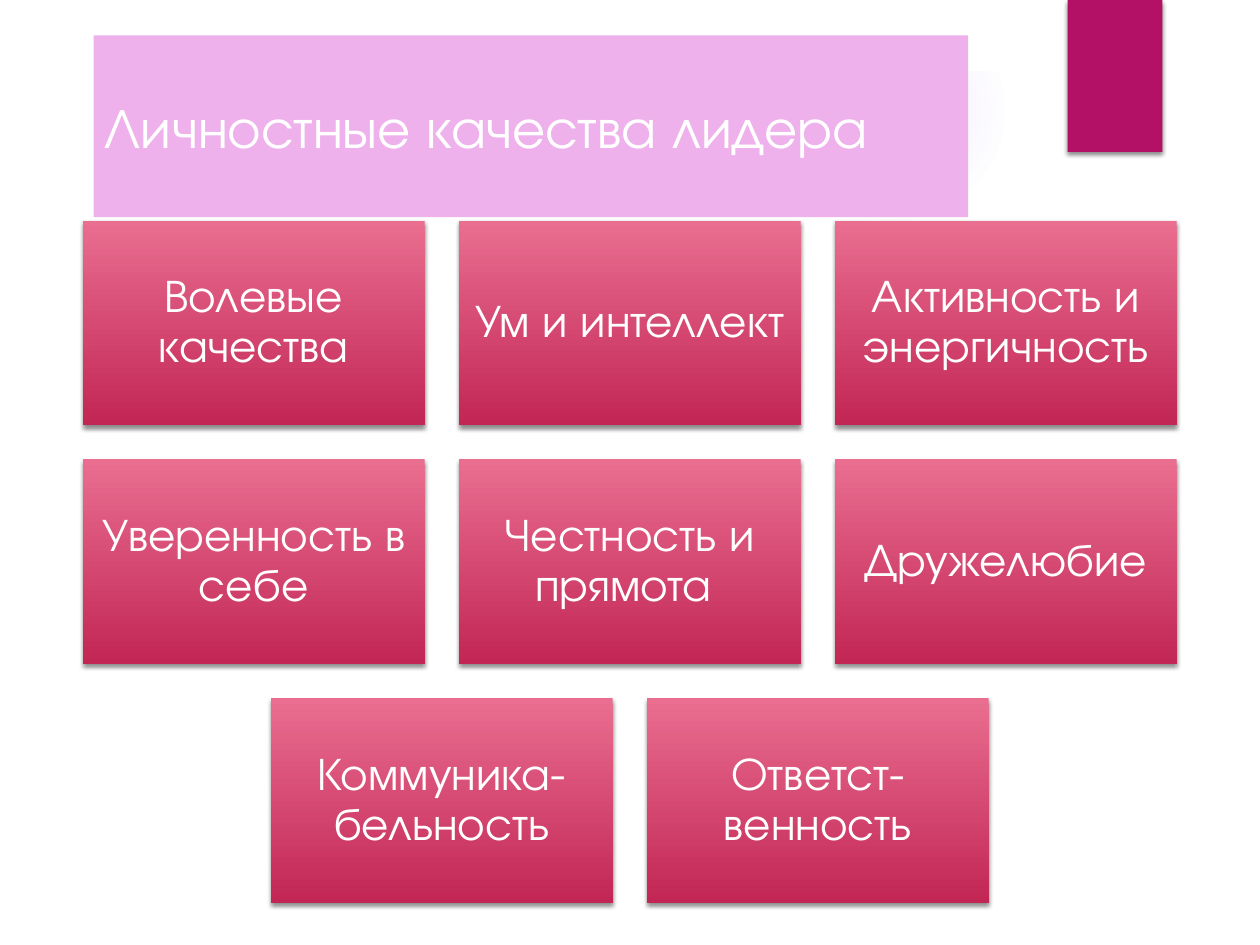
import pptx
import pptx.util
import pptx.dml.color
import pptx.enum.shapes
import pptx.enum.text
import pptx.oxml
import pptx.oxml.ns

Inches = pptx.util.Inches
Pt = pptx.util.Pt
SHAPES = pptx.enum.shapes.MSO_SHAPE
ALIGN = pptx.enum.text.PP_ALIGN

# Content
TITLE = "Личностные качества лидера"
QUALITY_ROWS = [
    ["Волевые качества", "Ум и интеллект", "Активность и энергичность"],
    ["Уверенность в себе", "Честность и прямота ", "Дружелюбие"],
    ["Коммуника-бельность", "Ответст-венность"],
]

# Style and measures
FONT = "TeX Gyre Adventor"
COLORS = {
    "white": "FFFFFF", "title": "EEB1EC", "tab": "B31166", "glow": "9B6BF2",
    "card_top": "E96E90", "card_bottom": "C22655", "shadow": "000000",
}
# The page is 28 by 21 cm
PAGE_W, PAGE_H = 28 / 2.54, 21 / 2.54
CARD_W, CARD_H, GAP = 2.99, 1.79, 0.3
GRID_CENTER, GRID_TOP = 5.51, 1.93
FRAME_WIDTH = 0.62
GLOW_STOPS = [(0, 14), (36, 7), (73, 0)]  # position %, opacity %
DRAWING_NS = pptx.oxml.ns.nsdecls("a")


def color(name):
    return pptx.dml.color.RGBColor.from_string(COLORS[name])


def add_box(page, left, top, width, height, fill=None, kind=SHAPES.RECTANGLE):
    box = page.shapes.add_shape(
        kind, Inches(left), Inches(top), Inches(width), Inches(height))
    box.shadow.inherit = False
    box.line.fill.background()
    if fill:
        box.fill.solid()
        box.fill.fore_color.rgb = color(fill)
    return box


def add_shadow(box):
    effects = box._element.spPr.find(pptx.oxml.ns.qn("a:effectLst"))
    effects.append(pptx.oxml.parse_xml(
        f'<a:outerShdw {DRAWING_NS} blurRad="{Pt(3)}" dist="{Pt(2)}" '
        f'dir="5400000" rotWithShape="0"><a:srgbClr val="{COLORS["shadow"]}">'
        '<a:alpha val="45000"/></a:srgbClr></a:outerShdw>'))


def add_glow(page, left, top, size):
    glow = add_box(page, left, top, size, size, "glow", SHAPES.OVAL)
    stops = "".join(
        f'<a:gs pos="{position * 1000}"><a:srgbClr val="{COLORS["glow"]}">'
        f'<a:alpha val="{opacity * 1000}"/></a:srgbClr></a:gs>'
        for position, opacity in GLOW_STOPS)
    gradient = pptx.oxml.parse_xml(
        f'<a:gradFill {DRAWING_NS}><a:gsLst>{stops}</a:gsLst>'
        '<a:path path="circle"><a:fillToRect l="50000" t="50000" '
        'r="50000" b="50000"/></a:path></a:gradFill>')
    properties = glow._element.spPr
    solid = properties.find(pptx.oxml.ns.qn("a:solidFill"))
    properties.replace(solid, gradient)


def write(box, text, size, align):
    frame = box.text_frame
    frame.word_wrap = True
    frame.vertical_anchor = pptx.enum.text.MSO_ANCHOR.MIDDLE
    para = frame.paragraphs[0]
    para.alignment = align
    span = para.add_run()
    span.text = text
    span.font.size = Pt(size)
    span.font.name = FONT
    span.font.color.rgb = color("white")
    return frame, para


def add_card(page, left, top, text):
    card = add_box(page, left, top, CARD_W, CARD_H)
    card.fill.gradient()
    card.fill.gradient_angle = 270
    for stop, name in zip(card.fill.gradient_stops, ("card_top", "card_bottom")):
        stop.color.rgb = color(name)
    add_shadow(card)
    frame, para = write(card, text, 29, ALIGN.CENTER)
    para.line_spacing = 0.9
    frame.margin_left = frame.margin_right = Inches(0.12)
    frame.margin_top = frame.margin_bottom = Inches(0.12)


def main():
    deck = pptx.Presentation()
    deck.slide_width, deck.slide_height = Inches(PAGE_W), Inches(PAGE_H)
    page = deck.slides.add_slide(deck.slide_layouts[6])

    # Background glow, cut off by the white page frame
    add_glow(page, 6.86, 0, 1.93)
    border = add_box(page, 0, 0, PAGE_W, PAGE_H, "white", SHAPES.FRAME)
    border.adjustments[0] = FRAME_WIDTH / PAGE_H

    # Corner tab and title
    add_shadow(add_box(page, 9.34, 0, 0.83, 1.33, "tab"))
    title = add_box(page, 0.82, 0.31, 7.65, 1.59, "title")
    write(title, TITLE, 35.3, ALIGN.LEFT)

    # Cards, each row centred
    for row, qualities in enumerate(QUALITY_ROWS):
        row_width = len(qualities) * (CARD_W + GAP) - GAP
        left = GRID_CENTER - row_width / 2
        top = GRID_TOP + row * (CARD_H + GAP)
        for column, quality in enumerate(qualities):
            add_card(page, left + column * (CARD_W + GAP), top, quality)

    deck.save("out.pptx")


if __name__ == "__main__":
    main()
